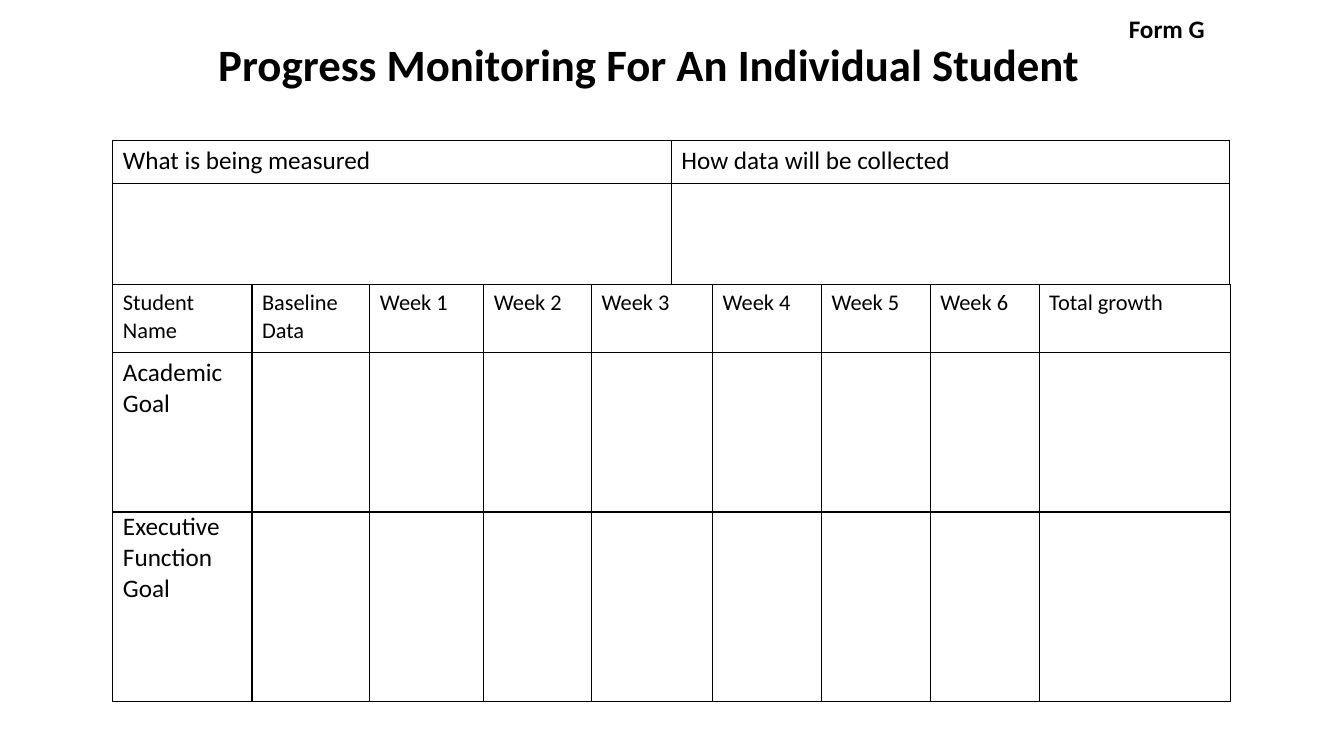
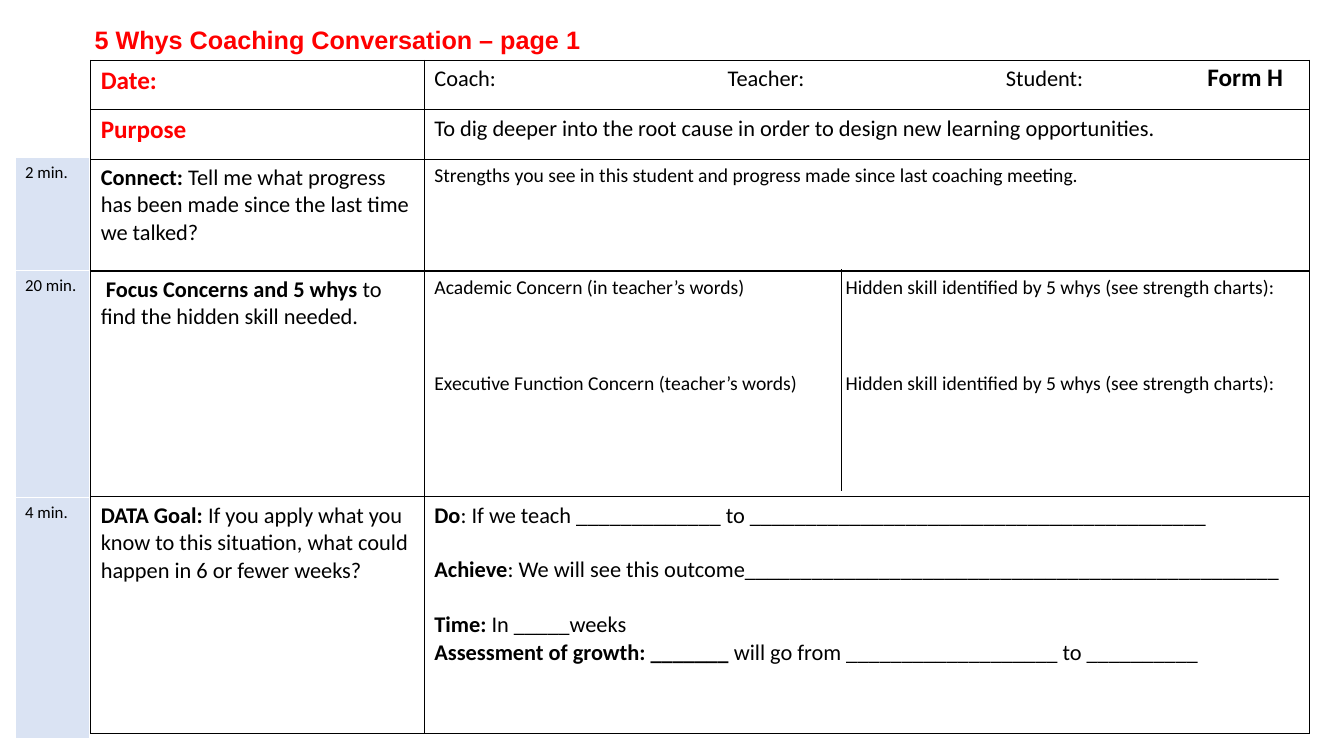
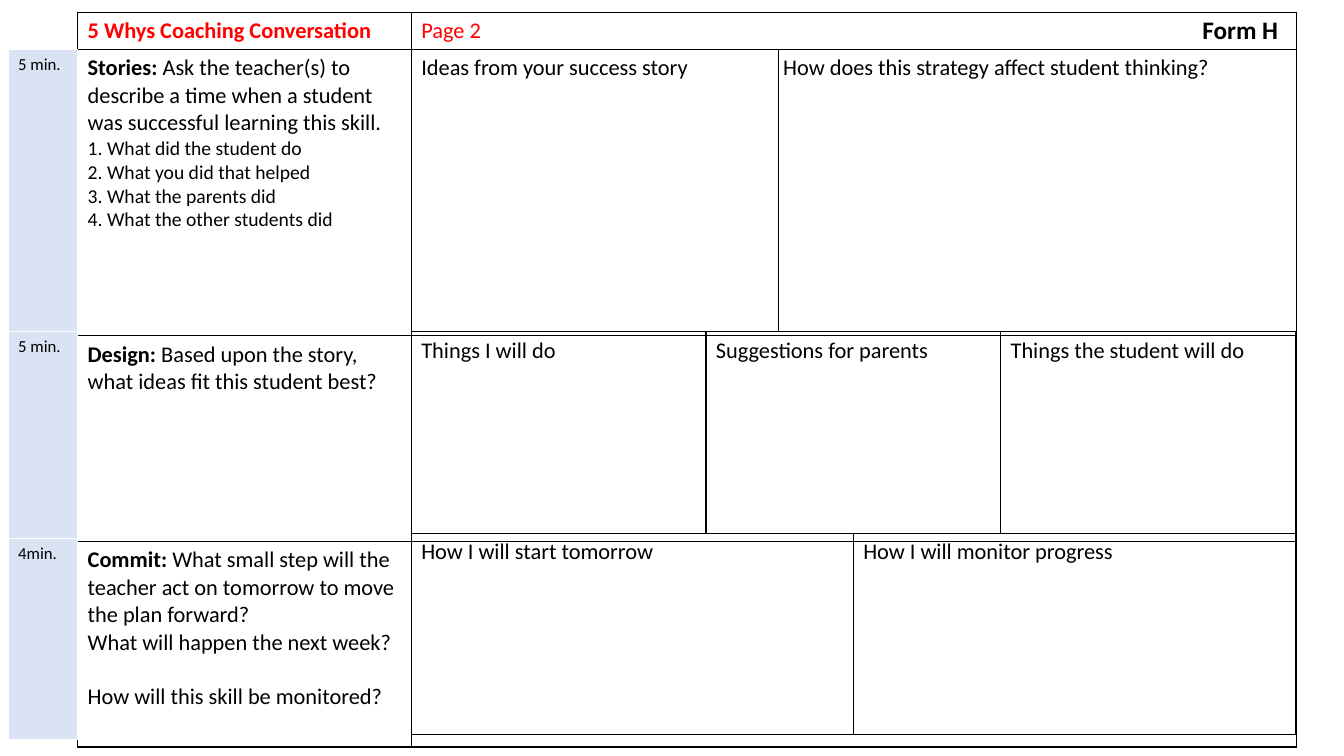
from dataclasses import dataclass

from lxml.etree import SubElement
from pptx import Presentation
from pptx.dml.color import RGBColor
from pptx.enum.shapes import MSO_CONNECTOR as Connector
from pptx.enum.text import MSO_ANCHOR as Anchor, MSO_AUTO_SIZE as AutoSize, PP_ALIGN as Align
from pptx.oxml.ns import qn
from pptx.util import Inches, Pt

COLUMNS, ROWS = 80, 45
BLACK, WHITE, RED, PALE_BLUE = "000000", "FFFFFF", "FF0000", "DAE3F3"
FORM_COLUMNS = (19.86, 52.68)


def units(count):
    """Length of a number of grid steps, six to the inch."""
    return Inches(count / 6)


def color(hex_value):
    return RGBColor.from_string(hex_value)


@dataclass
class Line:
    """A paragraph: an optional bold lead, then plain text."""
    bold: str = ""
    plain: str = ""
    size: int = 16
    ink: str = BLACK
    font: str = "Calibri"
    before: float = 0
    tabs: tuple = ()


class FormDeck:
    def __init__(self):
        self.deck = Presentation()
        self.deck.slide_width, self.deck.slide_height = units(COLUMNS), units(ROWS)
        self.slide = None

    def new_slide(self):
        self.slide = self.deck.slides.add_slide(self.deck.slide_layouts[6])

    def add_lines(self, frame, lines):
        for index, line in enumerate(lines):
            paragraph = frame.add_paragraph() if index else frame.paragraphs[0]
            if line.before:
                paragraph.space_before = Pt(line.before)
            if line.tabs:
                stops = SubElement(paragraph._p.get_or_add_pPr(), qn("a:tabLst"))
                for stop in line.tabs:
                    SubElement(stops, qn("a:tab"), pos=str(units(stop)), algn="l")
            for text, is_bold in ((line.bold, True), (line.plain, False)):
                if text:
                    run = paragraph.add_run()
                    run.text = text
                    run.font.name, run.font.size, run.font.bold = line.font, Pt(line.size), is_bold
                    run.font.color.rgb = color(line.ink)

    def label(self, left, top, width, line, height=2.4):
        box = self.slide.shapes.add_textbox(*map(units, (left, top, width, height)))
        box.text_frame.word_wrap = False
        box.text_frame.auto_size = AutoSize.SHAPE_TO_FIT_TEXT
        self.add_lines(box.text_frame, [line])

    def form_mark(self, left, top, text):
        self.label(left, top, 5.76, Line(text, size=18))

    def title(self, text):
        box = self.slide.shapes.add_textbox(*map(units, (4.14, 2.52, 69, 2.88)))
        frame = box.text_frame
        frame.word_wrap, frame.vertical_anchor = True, Anchor.MIDDLE
        self.add_lines(frame, [Line(text, size=32)])
        frame.paragraphs[0].alignment = Align.CENTER
        frame.paragraphs[0].line_spacing = 0.9

    def rule(self, start, end, weight):
        line = self.slide.shapes.add_connector(
            Connector.STRAIGHT, *map(units, (*start, *end)))
        line.line.color.rgb, line.line.width = color(BLACK), Pt(weight)
        SubElement(line._element.spPr, qn("a:effectLst"))

    def borders(self, cell, ink):
        properties = cell._tc.get_or_add_tcPr()
        for side in ("lnL", "lnR", "lnT", "lnB"):
            edge = SubElement(properties, qn(f"a:{side}"), w=str(Pt(1)))
            SubElement(SubElement(edge, qn("a:solidFill")), qn("a:srgbClr"), val=ink)

    def table(self, left, top, widths, heights, content, ink=BLACK, fill=None):
        """Draw a bordered table; each content cell is a list of lines."""
        table = self.slide.shapes.add_table(
            len(heights), len(widths),
            *map(units, (left, top, sum(widths), sum(heights)))).table
        table.first_row = table.horz_banding = False
        for column, width in zip(table.columns, widths):
            column.width = units(width)
        for row, height in zip(table.rows, heights):
            row.height = units(height)
        for cell in table.iter_cells():
            self.borders(cell, ink)
            if fill:
                cell.fill.solid()
                cell.fill.fore_color.rgb = color(fill)
            else:
                cell.fill.background()
        for r, row in enumerate(content):
            for c, lines in enumerate(row):
                self.add_lines(table.cell(r, c).text_frame, lines)

    def timings(self, left, top, width, heights, minutes):
        self.table(left, top, (width,), heights,
                   [[[Line(plain=text, size=12)]] for text in minutes], WHITE, PALE_BLUE)


def plain_row(texts, size=16):
    return [[Line(plain=text, size=size)] for text in texts]


def progress_slide(form):
    form.new_slide()
    form.title("Progress Monitoring For An Individual Student")
    left, right = 6.72, 73.2
    weeks = [f"Week {number}" for number in range(1, 7)]
    goals = [Line(plain="Academic", size=18), Line(plain="Goal", size=18),
             Line(plain="Executive Function", size=18, before=66),
             Line(plain="Goal", size=18)]
    form.table(left, 16.92, (8.28, 7.02, 6.78, 6.42, 7.2, 6.48, 6.48, 6.48, 11.4), (4.08, 20.76),
               [plain_row(["Student Name", "Baseline Data", *weeks, "Total growth"]), [goals]])
    form.table(left, 8.34, (33.24,) * 2, (2.58, 6),
               [plain_row(["What is being measured", "How data will be collected"], 18)])
    form.rule((left, 30.48), (right, 30.48), 1.5)
    form.form_mark(66.6, 0.48, "Form G")


def conversation_slide(form):
    form.new_slide()
    hidden_skill = "\tHidden skill identified by 5 whys (see strength charts):"
    concern_tabs = (24.48,)
    form.table(5.4, 3.6, FORM_COLUMNS, (2.94, 2.94, 6.66, 13.44, 14.1), [
        [[Line("Date:", size=18, ink=RED)],
         [Line(plain="Coach:\tTeacher:\tStudent:", tabs=(17.46, 34.02))]],
        [[Line("Purpose", size=18, ink=RED)],
         [Line(plain="To dig deeper into the root cause in order to design new "
                     "learning opportunities.")]],
        [[Line("Connect: ", "Tell me what progress has been made since the last time we talked?")],
         [Line(plain="Strengths you see in this student and progress made since last "
                     "coaching meeting.", size=14)]],
        [[Line(" Focus Concerns and 5 whys ", "to find the hidden skill needed.")],
         [Line(plain="Academic Concern (in teacher’s words)" + hidden_skill,
               size=14, tabs=concern_tabs),
          Line(plain="Executive Function Concern (teacher’s words)" + hidden_skill,
               size=14, tabs=concern_tabs, before=51)]],
        [[Line("DATA Goal:", " If you apply what you know to this situation, what could "
                             "happen in 6 or fewer weeks?")],
         [Line("Do", ": If we teach " + "_" * 13 + " to " + "_" * 41),
          Line("Achieve", ": We will see this outcome" + "_" * 48, before=19.5),
          Line("Time: ", "In _____weeks", before=19.5),
          Line("Assessment of growth: _______",
               " will go from " + "_" * 19 + " to " + "_" * 10)]],
    ])
    form.timings(0.9, 9.36, 4.44, (6.72, 13.56, 14.34), ("2 min.", "20 min.", "4 min."))
    form.label(5.04, 1.14, 30.42,
               Line("5 Whys Coaching Conversation – page 1", size=18, ink=RED, font="Arial"))
    form.rule((50.1, 16.02), (50.1, 29.22), 1)
    form.form_mark(71.28, 3.36, "Form H")


def strategy_slide(form):
    form.new_slide()
    questions = ("What did the student do", "What you did that helped",
                 "What the parents did", "What the other students did")
    form.table(4.62, 0.72, FORM_COLUMNS, (2.22, 17.04, 12.24, 12.24), [
        [[Line("5 Whys Coaching Conversation", ink=RED)], [Line(plain="Page 2", ink=RED)]],
        [[Line("Stories: ", "Ask the teacher(s) to describe a time when a student was "
                            "successful learning this skill."),
          *(Line(plain=f"{number}. {question}", size=14)
            for number, question in enumerate(questions, 1))],
         [Line(plain="Ideas from your success story\t"
                     "How does this strategy affect student thinking?", tabs=(21.54,))]],
        [[Line("Design: ", "Based upon the story, what ideas fit this student best?")]],
        [[Line("Commit: ", "What small step will the teacher act on tomorrow to move "
                           "the plan forward?"),
          Line(plain="What will happen the next week?"),
          Line(plain="How will this skill be monitored?", before=19.5)]],
    ])
    answers_left, answers_width = 24.48, 52.62
    for top, prompts in (
            (31.74, ("How I will start tomorrow", "How I will monitor progress")),
            (19.74, ("Things I will do", "Suggestions for parents", "Things the student will do"))):
        count = len(prompts)
        form.table(answers_left, top, (answers_width / count,) * count, (12,),
                   [plain_row(prompts)])
    form.timings(0.48, 2.94, 4.14, (16.8, 12.3, 12), ("5 min.", "5 min.", "4min."))
    form.rule((46.32, 2.94), (46.32, 19.74), 0.75)
    form.form_mark(70.98, 0.54, "Form H")


def main():
    form = FormDeck()
    progress_slide(form)
    conversation_slide(form)
    strategy_slide(form)
    form.deck.save("out.pptx")


if __name__ == "__main__":
    main()
